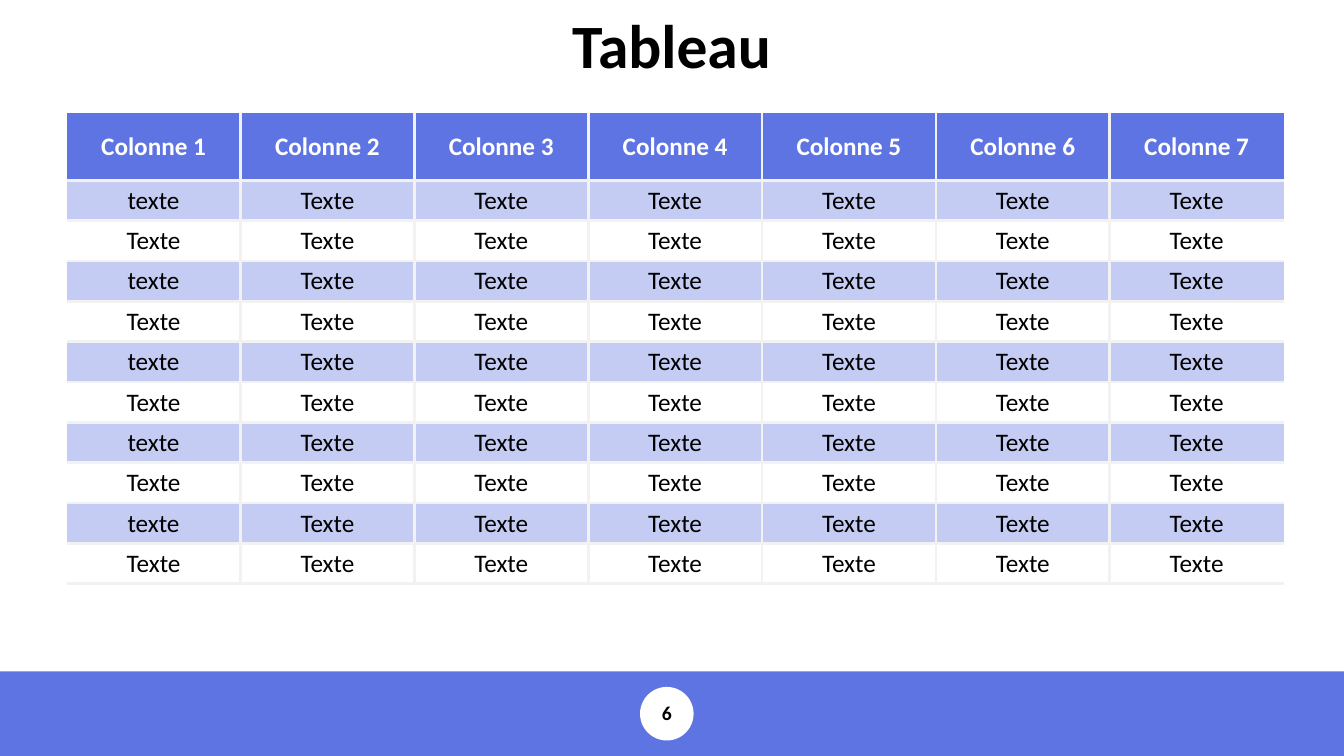
from lxml.etree import SubElement
from pptx import Presentation
from pptx.dml.color import RGBColor
from pptx.enum.shapes import MSO_SHAPE as Shape
from pptx.enum.text import MSO_ANCHOR as Anchor, PP_ALIGN as Align
from pptx.oxml.ns import qn
from pptx.util import Cm, Pt

COLORS = {"blue": "5E74E2", "pale": "C4CCF4", "white": "FFFFFF",
          "grid": "F2F2F2", "black": "000000"}
FONT = "Calibri"
BORDER_WIDTH = Pt(2.25)

TITLE_ONLY = 5
COLUMN_COUNT = 7
ROW_COUNT = 10
HEADER_HEIGHT = 1.7


def color(name):
    return RGBColor.from_string(COLORS[name])


def format_text(frame, text, size, color_name, bold, wrap=True):
    """Write one centred line in a text frame."""
    frame.text = text
    frame.word_wrap = wrap
    frame.vertical_anchor = Anchor.MIDDLE
    paragraph = frame.paragraphs[0]
    paragraph.alignment = Align.CENTER
    values = {"name": FONT, "size": Pt(size), "bold": bold}
    for name, value in values.items():
        setattr(paragraph.font, name, value)
    paragraph.font.color.rgb = color(color_name)
    return paragraph


def add_plain_shape(slide, kind, box, fill):
    shape = slide.shapes.add_shape(kind, *map(Cm, box))
    shape.shadow.inherit = False
    shape.fill.solid()
    shape.fill.fore_color.rgb = color(fill)
    shape.line.fill.background()


def set_borders(cell, visible):
    """Draw the listed sides in the grid colour and clear the others."""
    properties = cell._tc.get_or_add_tcPr()
    for side in "LRTB":
        line = SubElement(properties, qn(f"a:ln{side}"), w=str(BORDER_WIDTH))
        if side in visible:
            fill = SubElement(line, qn("a:solidFill"))
            SubElement(fill, qn("a:srgbClr"), val=COLORS["grid"])
        else:
            SubElement(line, qn("a:noFill"))


def add_title(slide, box, text):
    title = slide.shapes.title
    title.left, title.top, title.width, title.height = map(Cm, box)
    format_text(title.text_frame, text, 44, "black", True, wrap=False)


def add_text_table(slide, box):
    left, top, width, height = box
    frame = slide.shapes.add_table(ROW_COUNT + 1, COLUMN_COUNT, *map(Cm, box))
    table = frame.table
    table.horz_banding = False

    # Column widths and row heights
    for column in table.columns:
        column.width = Cm(width / COLUMN_COUNT)
    for row in table.rows:
        row.height = Cm((height - HEADER_HEIGHT) / ROW_COUNT)
    table.rows[0].height = Cm(HEADER_HEIGHT)

    # Cells: blue header, then alternating bands
    for row_index, row in enumerate(table.rows):
        header, banded = row_index == 0, row_index % 2 == 1
        fill = "blue" if header else "pale" if banded else "white"
        for column_index, cell in enumerate(row.cells):
            first = column_index == 0
            last = column_index == COLUMN_COUNT - 1
            if header:
                text = f"Colonne {column_index + 1}"
            else:
                text = "texte" if first and banded else "Texte"
            format_text(cell.text_frame, text, 18,
                        "white" if header else "black", header)
            cell.vertical_anchor = Anchor.MIDDLE
            set_borders(cell, "B" + "T" * (not header) + "L" * (not first)
                        + "R" * (not last))
            cell.fill.solid()
            cell.fill.fore_color.rgb = color(fill)


def add_footer(slide, box, number):
    left, top, width, height = box
    add_plain_shape(slide, Shape.RECTANGLE, box, "blue")

    # Page number in a white disc
    diameter = 1.35
    disc_left, disc_top = left + 16.13, top + (height - diameter) / 2
    add_plain_shape(slide, Shape.OVAL,
                    (disc_left, disc_top, diameter, diameter), "white")
    label_width, label_height = 2.18, 0.79
    label = slide.shapes.add_textbox(
        Cm(disc_left + (diameter - label_width) / 2),
        Cm(disc_top + (diameter - label_height) / 2),
        Cm(label_width), Cm(label_height))
    paragraph = format_text(label.text_frame, number, 14, "black", True)
    paragraph.line_spacing = 0.9


def main():
    presentation = Presentation()
    presentation.slide_width, presentation.slide_height = Cm(33.87), Cm(19.05)
    slide = presentation.slides.add_slide(
        presentation.slide_layouts[TITLE_ONLY])
    add_footer(slide, (0, 16.92, 33.87, 2.13), "6")
    add_title(slide, (14.15, 0.05, 5.56, 2.13), "Tableau")
    add_text_table(slide, (1.68, 2.84, 30.67, 11.87))
    presentation.save("out.pptx")


if __name__ == "__main__":
    main()
